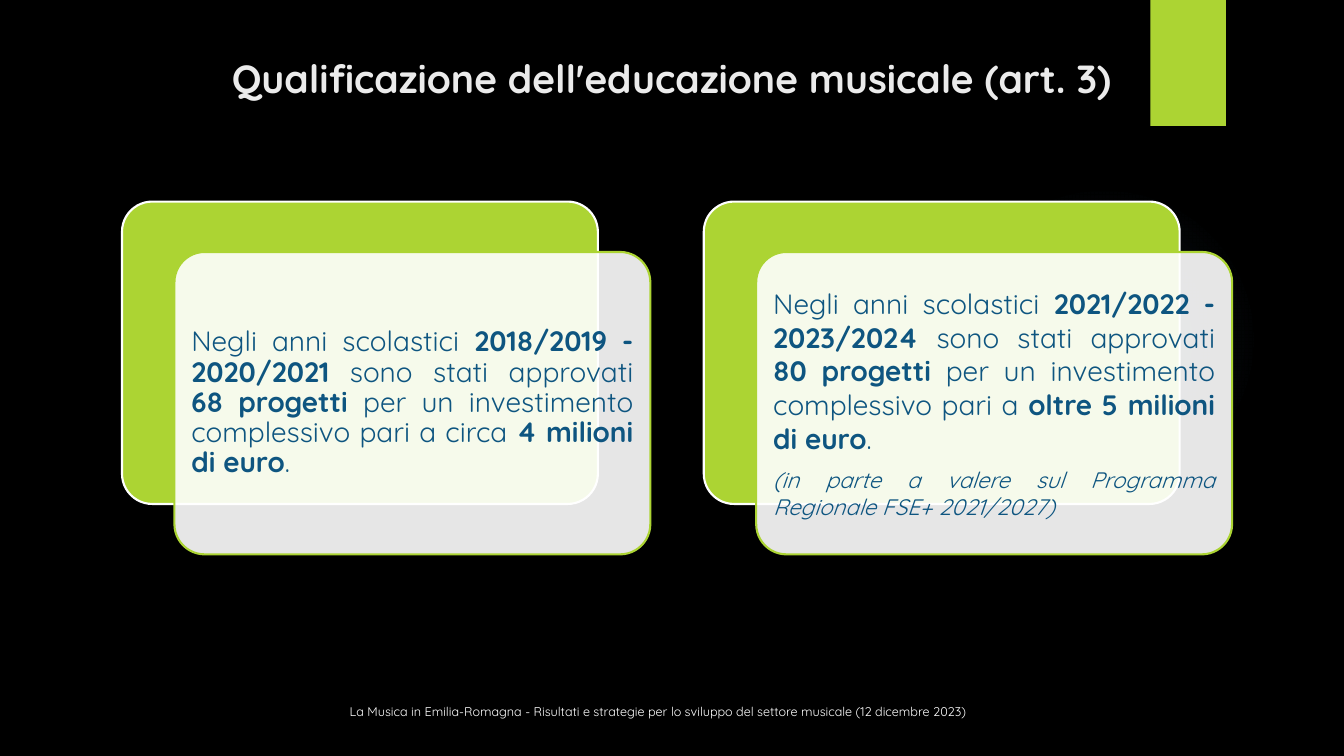
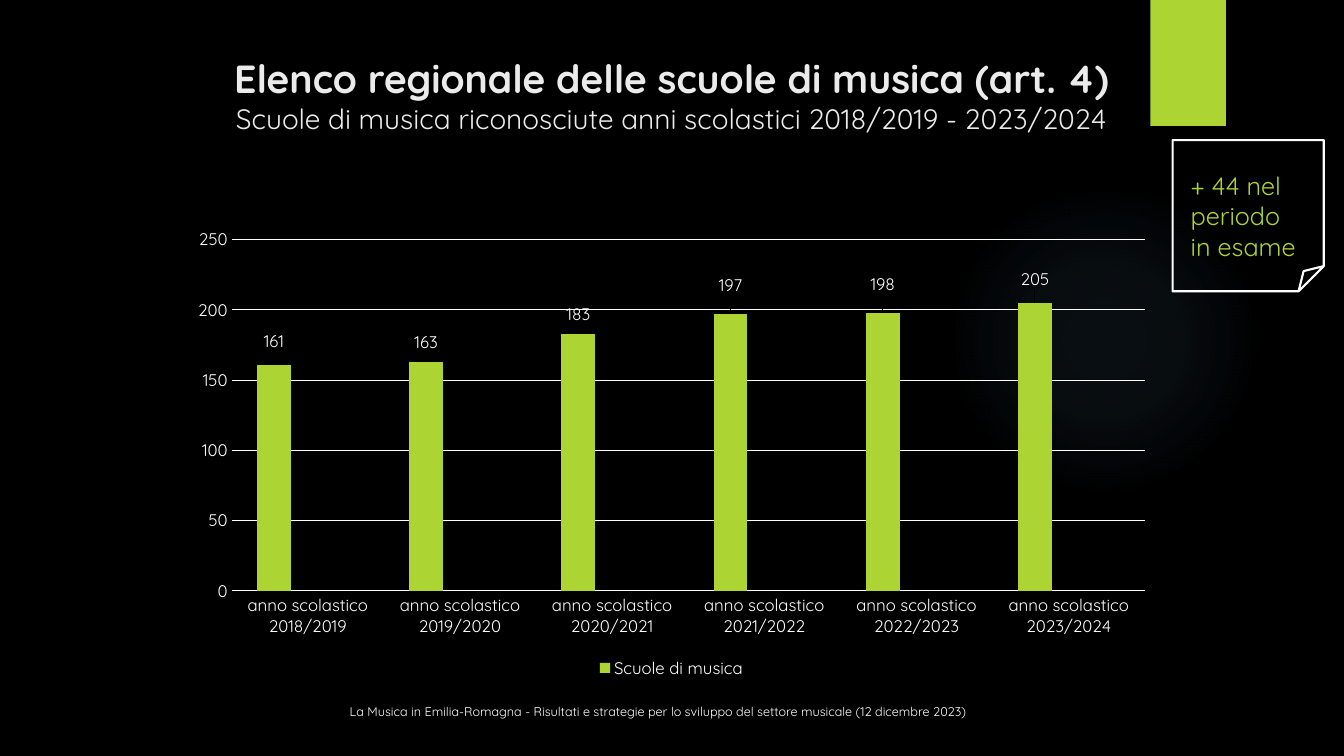
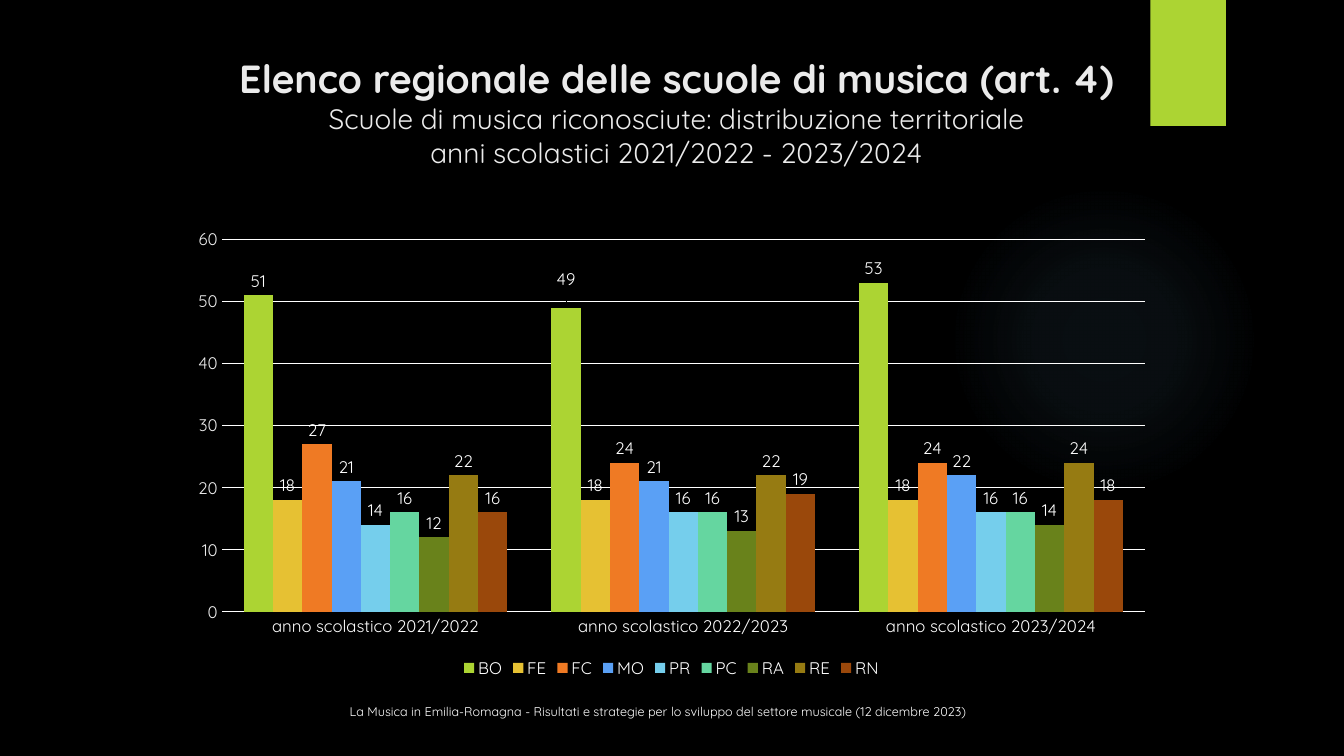
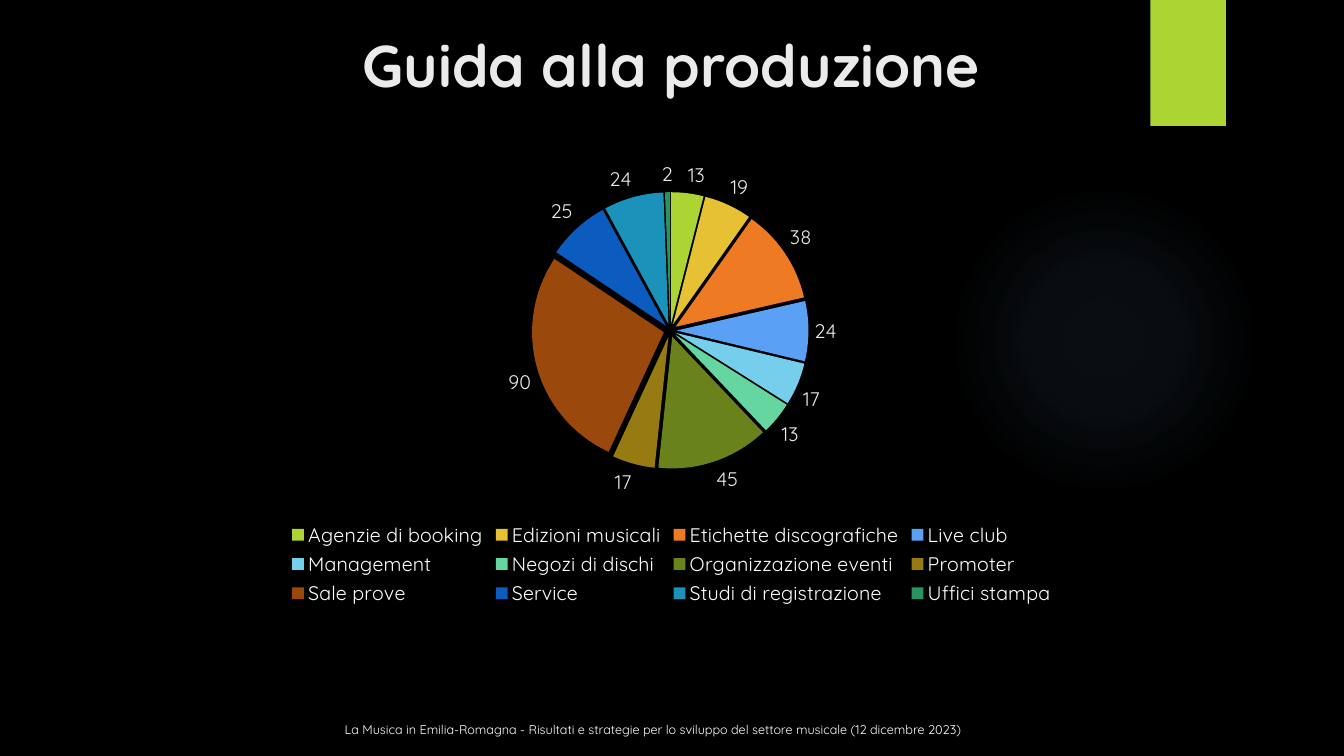
from pptx import Presentation
from pptx.chart.data import CategoryChartData
from pptx.dml.color import RGBColor
from pptx.enum import chart as ch
from pptx.enum import shapes, text
from pptx.oxml import parse_xml
from pptx.oxml.ns import nsdecls
from pptx.util import Inches, Pt

FONT = "Quicksand"
BLACK = RGBColor(0x00, 0x00, 0x00)
WHITE = RGBColor(0xFF, 0xFF, 0xFF)
LIGHT = RGBColor(0xEB, 0xEB, 0xEB)
BLUE = RGBColor(0x0E, 0x55, 0x80)
PALETTE = [RGBColor.from_string(code) for code in (
    "ACD433", "E6C133", "EF7A24", "5AA0F5", "75CEEC", "65D6A0",
    "69821B", "967B12", "9A480B", "0B5CBE", "1A92BA", "289561")]
GREEN = PALETTE[0]
GLOW_STOPS = [(0, 7), (36, 6), (69, 0)]  # position and opacity, in percent

FOOTER = ("La Musica in Emilia-Romagna - Risultati e strategie per lo sviluppo "
          "del settore musicale (12 dicembre 2023)")
SCHOOLS_TITLE = ("Elenco regionale delle scuole di musica (art. 4)", 28, True)

# Each card: line spacing, then paragraphs as (size, italic, [(text, bold), ...])
CARDS = [
    (0.9, [(20, False, [
        ("Negli anni scolastici ", False), ("2018/2019 - 2020/2021", True),
        (" sono stati approvati ", False), ("68 progetti ", True),
        ("per un investimento complessivo pari a circa", False),
        (" 4 milioni di euro", True), (".", False)])]),
    (1.0, [(20, False, [
        ("Negli anni scolastici ", False), ("2021/2022 - 2023/2024 ", True),
        ("sono stati approvati ", False), ("80 progetti ", True),
        ("per un investimento complessivo pari a ", False),
        ("oltre 5 milioni di euro", True), (".", False)]),
        (16, True, [("(in parte a valere sul Programma Regionale FSE+ 2021/2027)", False)])]),
]

YEARS = [f"anno scolastico {year}/{year + 1}" for year in range(2018, 2024)]
SCHOOLS = [("Scuole di musica", (161, 163, 183, 197, 198, 205)),
           ("Series 2", (None,) * 6),
           ("Series 3", (None,) * 6)]
PROVINCES = [("BO", (51, 49, 53)), ("FE", (18, 18, 18)), ("FC", (27, 24, 24)),
             ("MO", (21, 21, 22)), ("PR", (14, 16, 16)), ("PC", (16, 16, 16)),
             ("RA", (12, 13, 14)), ("RE", (22, 22, 24)), ("RN", (16, 19, 18))]
OPERATORS = [("Agenzie di booking", 13), ("Edizioni musicali", 19),
             ("Etichette discografiche", 38), ("Live club", 24), ("Management", 17),
             ("Negozi di dischi", 13), ("Organizzazione eventi", 45), ("Promoter", 17),
             ("Sale prove", 90), ("Service", 25), ("Studi di registrazione", 24),
             ("Uffici stampa", 2)]


def set_font(font, size, color, bold=None):
    font.name, font.size, font.bold = FONT, Pt(size), bold
    font.color.rgb = color


def add_box(slide, kind, left, top, width, height, fill=None, line=None):
    shape = slide.shapes.add_shape(
        kind, Inches(left), Inches(top), Inches(width), Inches(height))
    shape.shadow.inherit = False
    if fill is None:
        shape.fill.background()
    else:
        shape.fill.solid()
        shape.fill.fore_color.rgb = fill
    if line is None:
        shape.line.fill.background()
    else:
        shape.line.color.rgb = line
        shape.line.width = Pt(1.5)
    return shape


def add_text(slide, left, top, width, height, lines, color, align, anchor):
    """Add a text box with one paragraph per (text, size, bold) line."""
    box = slide.shapes.add_textbox(
        Inches(left), Inches(top), Inches(width), Inches(height))
    frame = box.text_frame
    frame.word_wrap = True
    frame.vertical_anchor = anchor
    for index, (words, size, bold) in enumerate(lines):
        paragraph = frame.add_paragraph() if index else frame.paragraphs[0]
        paragraph.text = words
        paragraph.alignment = align
        set_font(paragraph.font, size, color, bold)


def add_glow(slide):
    glow = add_box(slide, shapes.MSO_SHAPE.OVAL, 9.41, 1.83, 3.08, 3.08)
    stops = "".join(
        f'<a:gs pos="{position * 1000}"><a:srgbClr val="7AC4F0">'
        f'<a:alpha val="{opacity * 1000}"/></a:srgbClr></a:gs>'
        for position, opacity in GLOW_STOPS)
    gradient = parse_xml(
        f'<a:gradFill {nsdecls("a")}><a:gsLst>{stops}</a:gsLst><a:path path="circle">'
        '<a:fillToRect l="50000" t="50000" r="50000" b="50000"/></a:path></a:gradFill>')
    no_fill = glow.element.xpath("./p:spPr/a:noFill")[0]
    no_fill.getparent().replace(no_fill, gradient)


def add_base_slide(presentation, title_lines, title_left=1.16, title_top=0.49,
                   footer_left=3.37, footer_top=6.86):
    slide = presentation.slides.add_slide(presentation.slide_layouts[6])
    add_glow(slide)
    add_box(slide, shapes.MSO_SHAPE.RECTANGLE, 11.41, 0, 0.75, 1.25, GREEN)
    add_text(slide, title_left, title_top, 11, 1.22, title_lines, LIGHT,
             text.PP_ALIGN.CENTER, text.MSO_ANCHOR.TOP)
    add_text(slide, footer_left, footer_top, 6.69, 0.39, [(FOOTER, 9, False)], WHITE,
             text.PP_ALIGN.LEFT, text.MSO_ANCHOR.MIDDLE)
    return slide


def add_card(slide, left, line_spacing, paragraphs):
    rounded = shapes.MSO_SHAPE.ROUNDED_RECTANGLE
    back = add_box(slide, rounded, left, 2, 4.72, 3, GREEN, WHITE)
    front = add_box(slide, rounded, left + 0.52, 2.5, 4.72, 3, WHITE, GREEN)
    back.adjustments[0] = front.adjustments[0] = 0.1
    color = front.element.xpath("./p:spPr/a:solidFill/a:srgbClr")[0]
    color.append(parse_xml(f'<a:alpha {nsdecls("a")} val="90000"/>'))

    frame = front.text_frame
    frame.word_wrap = True
    frame.vertical_anchor = text.MSO_ANCHOR.MIDDLE
    frame.margin_left = frame.margin_right = Inches(0.08)
    frame.margin_top = frame.margin_bottom = Inches(0.08)
    for index, (size, italic, runs) in enumerate(paragraphs):
        paragraph = frame.add_paragraph() if index else frame.paragraphs[0]
        paragraph.alignment = text.PP_ALIGN.JUSTIFY
        paragraph.line_spacing = line_spacing
        paragraph.space_before = Pt(8 if index else 0)
        set_font(paragraph.font, size, BLUE)
        paragraph.font.italic = italic
        for words, bold in runs:
            run = paragraph.add_run()
            run.text = words
            run.font.bold = bold


def add_note(slide, words):
    note = add_box(slide, shapes.MSO_SHAPE.FOLDED_CORNER, 11.63, 1.39, 1.5, 1.5, line=WHITE)
    frame = note.text_frame
    frame.word_wrap = True
    frame.vertical_anchor = text.MSO_ANCHOR.MIDDLE
    frame.margin_left, frame.margin_right = Inches(0.18), Inches(0.05)
    frame.margin_top, frame.margin_bottom = Inches(0.3), Inches(0.05)
    paragraph = frame.paragraphs[0]
    paragraph.text = words
    paragraph.alignment = text.PP_ALIGN.LEFT
    set_font(paragraph.font, 18, GREEN)


def add_chart(slide, kind, top, categories, series, legend_size):
    data = CategoryChartData()
    data.categories = categories
    for name, values in series:
        data.add_series(name, values)
    chart = slide.shapes.add_chart(
        kind, Inches(1.77), Inches(top), Inches(9.78), Inches(4.59), data).chart
    set_font(chart.font, 10, WHITE)
    chart.has_title = False
    chart.has_legend = True
    chart.legend.position = ch.XL_LEGEND_POSITION.BOTTOM
    chart.legend.include_in_layout = False
    set_font(chart.legend.font, legend_size, WHITE)
    return chart


def show_values(series, size, color):
    labels = series.data_labels
    labels.show_value = True
    labels.position = ch.XL_LABEL_POSITION.OUTSIDE_END
    set_font(labels.font, size, color)


def add_columns(slide, categories, series, maximum, step, axis_color, raised):
    """Draw columns; raised maps points of the first series to a label lift."""
    chart = add_chart(slide, ch.XL_CHART_TYPE.COLUMN_CLUSTERED, 2.18,
                      categories, series, 12)
    plot = chart.plots[0]
    plot.gap_width = 150
    plot.vary_by_categories = False
    for axis, color in ((chart.category_axis, WHITE), (chart.value_axis, axis_color)):
        axis.major_tick_mark = axis.minor_tick_mark = ch.XL_TICK_MARK.NONE
        axis.format.line.fill.background()
        set_font(axis.tick_labels.font, 12, color)
    value_axis = chart.value_axis
    value_axis.minimum_scale, value_axis.maximum_scale = 0, maximum
    value_axis.major_unit = step
    value_axis.has_major_gridlines = True
    value_axis.major_gridlines.format.line.color.rgb = WHITE
    value_axis.major_gridlines.format.line.width = Pt(0.75)

    for column, color in zip(plot.series, PALETTE):
        column.format.fill.solid()
        column.format.fill.fore_color.rgb = color
        show_values(column, 12, WHITE)
    for index, lift in raised.items():
        label = plot.series[0].points[index].data_label
        set_font(label.font, 12, WHITE)
        label.position = ch.XL_LABEL_POSITION.OUTSIDE_END
        position = chart.element.xpath(f".//c:dLbl/c:idx[@val='{index}']")[0]
        position.addnext(parse_xml(
            f'<c:layout {nsdecls("c")}><c:manualLayout><c:x val="0"/>'
            f'<c:y val="{-lift}"/></c:manualLayout></c:layout>'))
    return chart


def hide_legend_entries(chart, indexes):
    legend_position = chart.element.xpath(".//c:legend/c:legendPos")[0]
    for index in reversed(indexes):
        legend_position.addnext(parse_xml(
            f'<c:legendEntry {nsdecls("c")}><c:idx val="{index}"/>'
            '<c:delete val="1"/></c:legendEntry>'))


def add_pie(slide, slices):
    names, values = zip(*slices)
    chart = add_chart(slide, ch.XL_CHART_TYPE.PIE, 1.46, names, [("Series 1", values)], 14)
    chart.plots[0].vary_by_categories = True
    series = chart.plots[0].series[0]
    for index, color in enumerate(PALETTE):
        fill = series.points[index].format.fill
        fill.solid()
        fill.fore_color.rgb = color
    show_values(series, 14, LIGHT)
    chart.element.xpath(".//c:ser/c:tx")[0].addnext(
        parse_xml(f'<c:explosion {nsdecls("c")} val="5"/>'))


def main():
    presentation = Presentation()
    presentation.slide_width, presentation.slide_height = Inches(13.33), Inches(7.5)
    background = presentation.slide_master.background.fill
    background.solid()
    background.fore_color.rgb = BLACK

    slide = add_base_slide(
        presentation, [("Qualificazione dell'educazione musicale (art. 3)", 28, True)])
    for index, card in enumerate(CARDS):
        add_card(slide, 1.21 + 5.77 * index, *card)

    slide = add_base_slide(presentation, [
        SCHOOLS_TITLE,
        ("Scuole di musica riconosciute anni scolastici 2018/2019 - 2023/2024", 20, False)])
    chart = add_columns(slide, YEARS, SCHOOLS, 250, 50, WHITE,
                        {0: 0.02, 1: 0.01, 2: 0.01, 3: 0.03, 4: 0.03, 5: 0.02})
    hide_legend_entries(chart, [1, 2])
    add_note(slide, "+ 44 nel\vperiodo\vin esame")

    slide = add_base_slide(presentation, [
        SCHOOLS_TITLE,
        ("Scuole di musica riconosciute: distribuzione territoriale", 20, False),
        ("anni scolastici 2021/2022 - 2023/2024", 20, False)], title_left=1.21)
    add_columns(slide, YEARS[3:], PROVINCES, 60, 10, LIGHT, {1: 0.03})

    slide = add_base_slide(presentation, [("Guida alla produzione", 42, True)],
                           title_top=0.24, footer_left=3.32, footer_top=7.04)
    add_pie(slide, OPERATORS)

    presentation.save("out.pptx")


if __name__ == "__main__":
    main()
